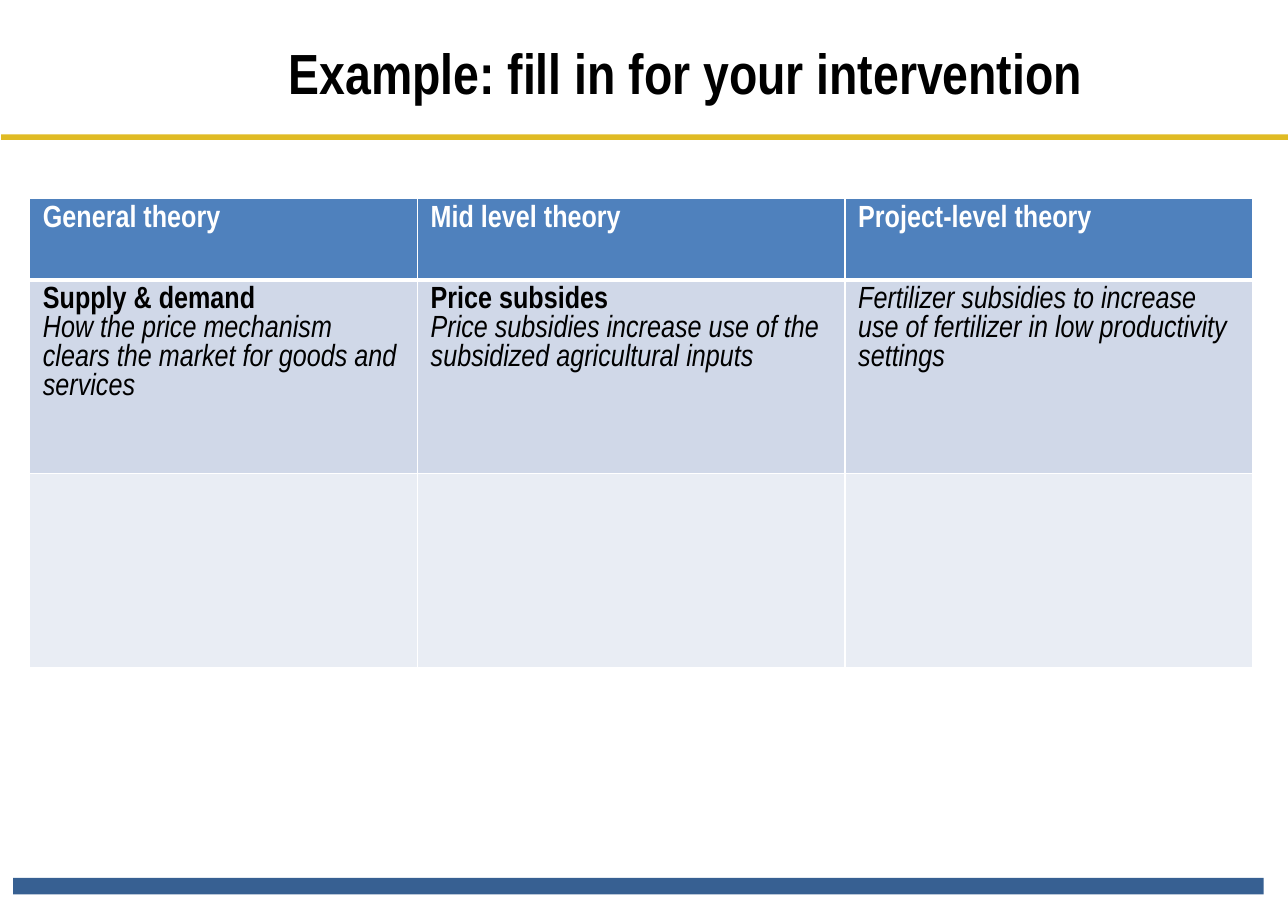
"""Build the slide with the theory levels table to fill in for an intervention."""
from lxml.etree import SubElement
from pptx import Presentation
from pptx.dml.color import RGBColor
from pptx.enum.shapes import MSO_SHAPE
from pptx.enum.text import MSO_ANCHOR, MSO_AUTO_SIZE, PP_ALIGN
from pptx.oxml.ns import qn
from pptx.util import Inches, Pt

FONT = "Arial Narrow"
BLACK = RGBColor(0x00, 0x00, 0x00)
WHITE = RGBColor(0xFF, 0xFF, 0xFF)
GOLD = RGBColor(0xE0, 0xBB, 0x24)
NAVY = RGBColor(0x37, 0x60, 0x92)
HEADER_BLUE = RGBColor(0x4F, 0x81, 0xBD)
BAND_DARK = RGBColor(0xD0, 0xD8, 0xE8)
BAND_LIGHT = RGBColor(0xE9, 0xED, 0xF4)

BOLD = {"bold": True, "italic": False}
ITALIC = {"bold": False, "italic": True}
COLUMN_WIDTHS = (3.52, 3.88, 3.7)
THEORY_ROWS = (
    (0.74, HEADER_BLUE, WHITE, (
        [("General theory", BOLD)],
        [("Mid level theory", BOLD)],
        [("Project-level theory", BOLD)],
    )),
    (1.76, BAND_DARK, BLACK, (
        [("Supply & demand", BOLD),
         ("How the price mechanism clears the market for goods and services", ITALIC)],
        [("Price subsides", BOLD),
         ("Price subsidies increase use of the subsidized agricultural inputs", ITALIC)],
        [("Fertilizer subsidies to increase use of fertilizer in low productivity settings",
          ITALIC)],
    )),
    (1.76, BAND_LIGHT, BLACK, ([], [], [])),
)


def set_attributes(target, values):
    for name, value in values.items():
        setattr(target, name, value)


def add_styled_run(paragraph, text, size, color, style):
    run = paragraph.add_run()
    run.text = text
    set_attributes(run.font, {"name": FONT, "size": Pt(size), **style})
    run.font.color.rgb = color


def add_bar(slide, left, top, width, height, color):
    bar = slide.shapes.add_shape(
        MSO_SHAPE.RECTANGLE, Inches(left), Inches(top), Inches(width), Inches(height))
    bar.shadow.inherit = False
    bar.fill.solid()
    bar.fill.fore_color.rgb = color
    bar.line.fill.background()


def set_title(slide, text):
    title = slide.shapes.title
    set_attributes(title, {
        "left": Inches(2.51), "top": Inches(0.28),
        "width": Inches(8.48), "height": Inches(0.74)})
    frame = title.text_frame
    set_attributes(frame, {
        "margin_left": Inches(0.11), "margin_right": Inches(0.11),
        "margin_top": Inches(0.06), "margin_bottom": Inches(0.06),
        "word_wrap": True, "auto_size": MSO_AUTO_SIZE.NONE,
        "vertical_anchor": MSO_ANCHOR.BOTTOM})
    heading = frame.paragraphs[0]
    heading.alignment = PP_ALIGN.LEFT
    add_styled_run(heading, text, 37, BLACK, BOLD)


def add_borders(cell, widths):
    properties = cell._tc.get_or_add_tcPr()
    for side, width in widths.items():
        border = SubElement(properties, qn(f"a:ln{side}"), w=str(Pt(width)))
        fill = SubElement(border, qn("a:solidFill"))
        SubElement(fill, qn("a:srgbClr"), val=str(WHITE))


def fill_cell(cell, lines, background, color, borders):
    set_attributes(cell, {
        "margin_left": Inches(0.12), "margin_right": Inches(0.12),
        "margin_top": Inches(0.06), "margin_bottom": Inches(0.06),
        "vertical_anchor": MSO_ANCHOR.TOP})
    add_borders(cell, borders)
    cell.fill.solid()
    cell.fill.fore_color.rgb = background
    frame = cell.text_frame
    for index, (text, style) in enumerate(lines):
        paragraph = frame.add_paragraph() if index else frame.paragraphs[0]
        add_styled_run(paragraph, text, 20, color, style)


def add_theory_table(slide):
    height = sum(row[0] for row in THEORY_ROWS)
    theories = slide.shapes.add_table(
        len(THEORY_ROWS), len(COLUMN_WIDTHS), Inches(0.27), Inches(1.8),
        Inches(sum(COLUMN_WIDTHS)), Inches(height)).table
    for column, width in zip(theories.columns, COLUMN_WIDTHS):
        column.width = Inches(width)
    for index, (row_height, background, color, entries) in enumerate(THEORY_ROWS):
        theories.rows[index].height = Inches(row_height)
        borders = {"L": 1, "R": 1, "T": 3 if index == 1 else 1, "B": 3 if index == 0 else 1}
        for cell, lines in zip(theories.rows[index].cells, entries):
            fill_cell(cell, lines, background, color, borders)


def main():
    deck = Presentation()
    set_attributes(deck, {"slide_width": Inches(11.69), "slide_height": Inches(8.27)})
    slide = deck.slides.add_slide(deck.slide_layouts[5])
    add_bar(slide, 0.12, 7.97, 11.35, 0.15, NAVY)
    add_bar(slide, 0.01, 1.22, 11.68, 0.05, GOLD)
    add_theory_table(slide)
    set_title(slide, "Example: fill in for your intervention")
    deck.save("out.pptx")


if __name__ == "__main__":
    main()
